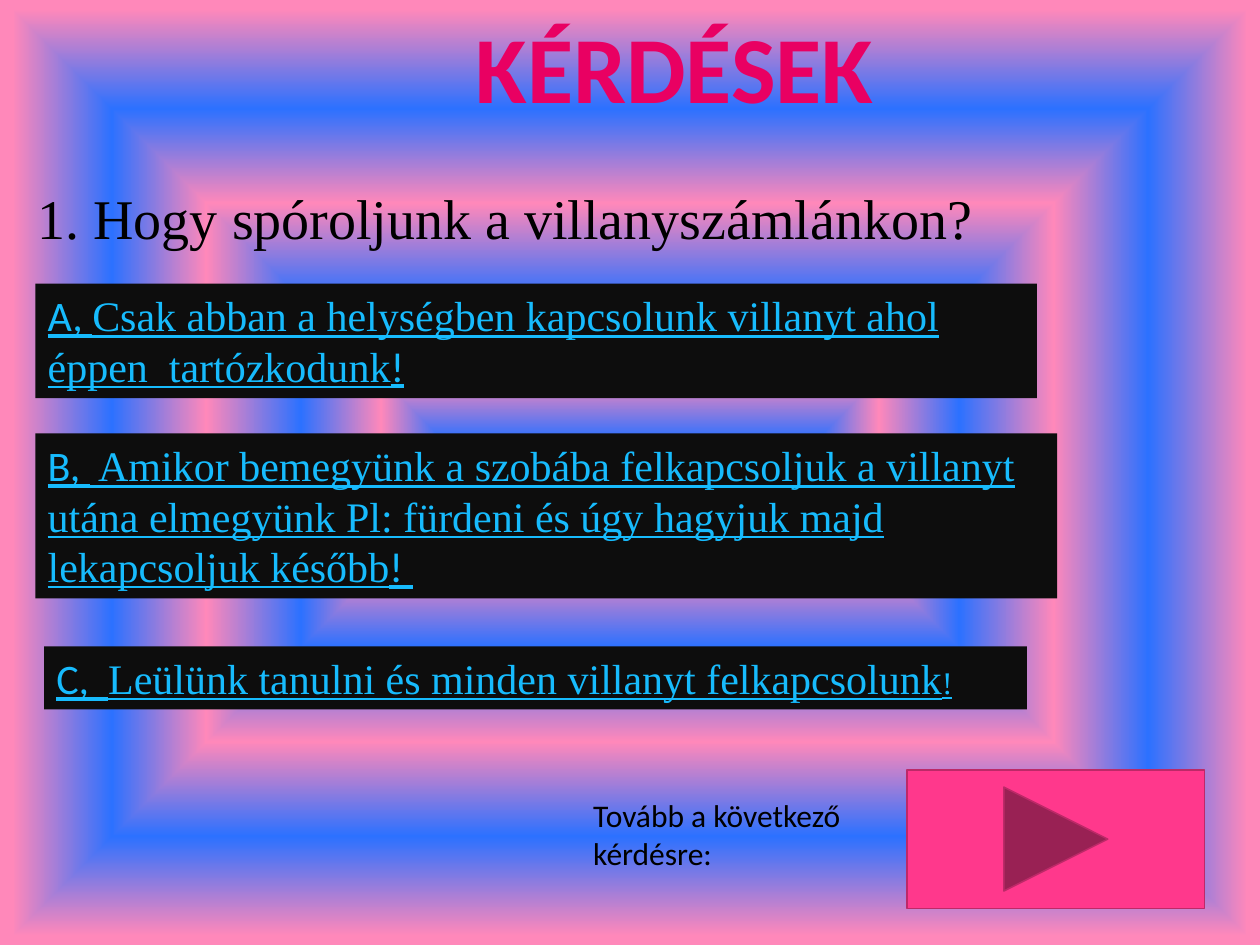
from lxml.etree import SubElement
from pptx import Presentation
from pptx.dml.color import RGBColor
from pptx.enum.shapes import MSO_SHAPE
from pptx.enum.text import MSO_ANCHOR, MSO_AUTO_SIZE, PP_ALIGN
from pptx.oxml.ns import qn
from pptx.util import Inches, Pt

SANS = "Calibri"
SERIF = "Times New Roman"


def color(code):
    return RGBColor.from_string(code)


class Quiz:
    black = "000000"
    panel = "0D0D0D"
    link = "17BBFD"
    pink = "FF388C"
    edge = "BD2968"
    title = "E90062"

    def __init__(self, slide):
        self.slide = slide

    def backdrop(self, stops):
        self.slide.background.fill.gradient()
        grad = self.slide.element.find(".//" + qn("a:gradFill"))
        for child in list(grad):
            grad.remove(child)
        group = SubElement(grad, qn("a:gsLst"))
        for place, code in stops:
            stop = SubElement(group, qn("a:gs"), pos=str(place * 1000))
            SubElement(stop, qn("a:srgbClr"), val=code)
        shade = SubElement(grad, qn("a:path"), {"path": "rect"})
        SubElement(shade, qn("a:fillToRect"), dict.fromkeys("ltrb", "50000"))

    def letter(self, shape, runs, tint, align=PP_ALIGN.LEFT, wrap=True):
        frame = shape.text_frame
        frame.word_wrap = wrap
        frame.auto_size = MSO_AUTO_SIZE.SHAPE_TO_FIT_TEXT
        frame.vertical_anchor = MSO_ANCHOR.TOP
        line = frame.paragraphs[0]
        line.alignment = align
        for words, face, size in runs:
            run = line.add_run()
            run.text = words
            run.font.name = face
            run.font.size = Pt(size)
            run.font.color.rgb = color(tint)
        return line.runs

    def label(self, box, words, face, size, tint=black, **style):
        shape = self.slide.shapes.add_textbox(*map(Inches, box))
        return self.letter(shape, [(words, face, size)], tint, **style)

    def block(self, kind, box, fill):
        shape = self.slide.shapes.add_shape(kind, *map(Inches, box))
        shape.shadow.inherit = False
        shape.fill.solid()
        shape.fill.fore_color.rgb = color(fill)
        shape.line.fill.background()
        return shape

    def answer(self, box, runs):
        shape = self.block(MSO_SHAPE.RECTANGLE, box, self.panel)
        for run in self.letter(shape, runs, self.link):
            run.font.underline = True

    def button(self, box):
        kind = MSO_SHAPE.ACTION_BUTTON_FORWARD_OR_NEXT
        shape = self.block(kind, box, self.pink)
        shape.line.color.rgb = color(self.edge)
        shape.line.width = Pt(0.85)


def main():
    deck = Presentation()
    deck.slide_width = Inches(10)
    deck.slide_height = Inches(7.5)
    quiz = Quiz(deck.slides.add_slide(deck.slide_layouts[6]))

    blue, rose = "2C71FF", "FF88BA"
    quiz.backdrop(zip((7, 20, 37, 57, 77, 98), (blue, rose) * 3))

    head = quiz.label((3.66, 0.02, 3.39, 1.01), "KÉRDÉSEK", SANS, 54,
                      quiz.title, align=PP_ALIGN.CENTER, wrap=False)
    head[0].font.bold = True
    quiz.label((0.2, 1.41, 8.5, 0.64),
               "1. Hogy spóroljunk a villanyszámlánkon?", SERIF, 32)

    quiz.answer((0.28, 2.25, 7.95, 0.91), [
        ("A, ", SANS, 24),
        ("Csak abban a helységben kapcsolunk villanyt ahol "
         "éppen  tartózkodunk", SERIF, 24),
        ("!", SANS, 24)])
    quiz.answer((0.28, 3.44, 8.11, 1.31), [
        ("B, ", SANS, 24),
        (" Amikor bemegyünk a szobába felkapcsoljuk a villanyt "
         "utána elmegyünk Pl: fürdeni és úgy hagyjuk majd "
         "lekapcsoljuk később", SERIF, 24),
        ("! ", SANS, 24)])
    quiz.answer((0.35, 5.13, 7.8, 0.5), [
        ("C,  ", SANS, 24),
        ("Leülünk tanulni és minden villanyt felkapcsolunk", SERIF, 24),
        ("!", SERIF, 18)])

    quiz.button((7.2, 6.11, 2.36, 1.1))
    quiz.label((4.61, 6.27, 2.45, 1.01),
               "Tovább a következő kérdésre:", SANS, 18)
    deck.save("out.pptx")


if __name__ == "__main__":
    main()
